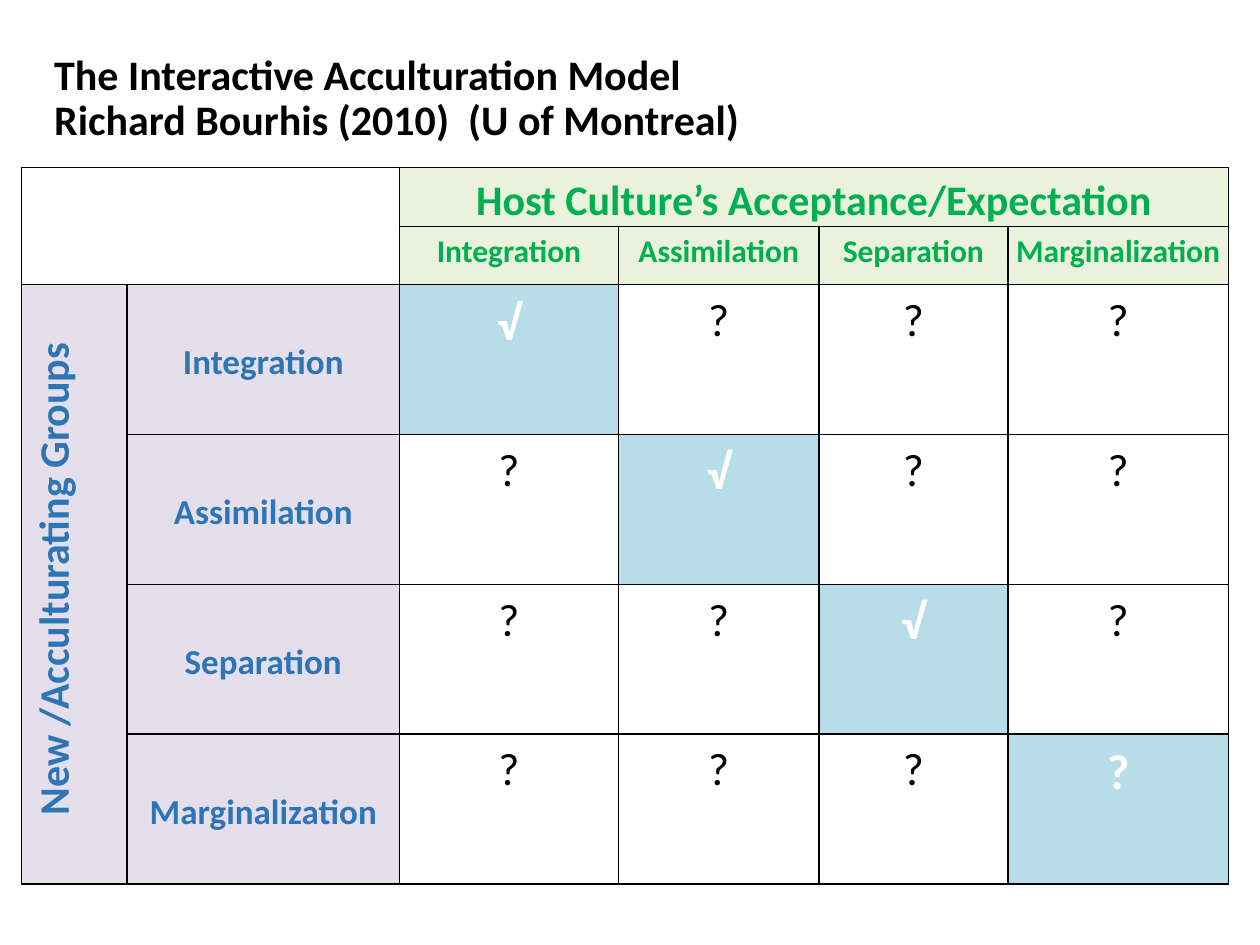
from lxml import etree
from pptx import Presentation
from pptx import util as u
from pptx.dml import color
from pptx.enum import text
from pptx.oxml import ns

COLORS = {
    "ink": "000000",
    "host": "00B050",
    "host_fill": "EAF1DD",
    "group": "2E75B6",
    "group_fill": "E5DFEC",
    "match": "FFFFFF",
    "match_fill": "B6DDE8",
}
FONT = "Calibri"
STRATEGIES = ["Integration", "Assimilation", "Separation", "Marginalization"]
COL_WIDTHS = [0.84, 2.16, 1.74, 1.59, 1.5, 1.75]
ROW_HEIGHTS = [0.46] * 2 + [1.19] * 4


def rgb(name):
    return color.RGBColor.from_string(COLORS[name])


def format_runs(p, size, ink, bold=True):
    for r in p.runs:
        r.font.name = FONT
        r.font.size = u.Pt(size)
        r.font.bold = bold
        r.font.color.rgb = rgb(ink)


def add_borders(cell):
    tcPr = cell._tc.get_or_add_tcPr()
    for i, side in enumerate(("lnL", "lnR", "lnT", "lnB")):
        ln = etree.Element(ns.qn(f"a:{side}"), w=str(u.Pt(1)))
        fill = etree.SubElement(ln, ns.qn("a:solidFill"))
        etree.SubElement(fill, ns.qn("a:srgbClr"), val=COLORS["ink"])
        tcPr.insert(i, ln)


def fill_cell(cell, words, size, ink, fill=None, bold=True):
    p = cell.text_frame.paragraphs[0]
    p.text = words
    p.alignment = text.PP_ALIGN.CENTER
    p.line_spacing = 1.15
    p.space_after = u.Pt(10)
    format_runs(p, size, ink, bold)
    if fill:
        cell.fill.solid()
        cell.fill.fore_color.rgb = rgb(fill)


def add_title(s, left, top, width, height):
    sp = s.shapes.title
    sp.left, sp.top, sp.width, sp.height = map(u.Inches, (left, top, width, height))
    tf = sp.text_frame
    tf.text = "The Interactive Acculturation Model \vRichard Bourhis (2010)  (U of Montreal)"
    tf.vertical_anchor = text.MSO_ANCHOR.MIDDLE
    p = tf.paragraphs[0]
    p.alignment = text.PP_ALIGN.LEFT
    p.line_spacing = 0.9
    format_runs(p, 24, "ink")


def add_matrix(s, left, top, width, height):
    box = map(u.Inches, (left, top, width, height))
    table = s.shapes.add_table(len(ROW_HEIGHTS), len(COL_WIDTHS), *box).table
    table.first_row = table.horz_banding = False
    for col, w in zip(table.columns, COL_WIDTHS):
        col.width = u.Inches(w)
    for row, h in zip(table.rows, ROW_HEIGHTS):
        row.height = u.Inches(h)
    for cell in table.iter_cells():
        cell.margin_left = cell.margin_right = u.Inches(0.05)
        cell.margin_top = cell.margin_bottom = 0
        cell.fill.background()
        add_borders(cell)

    table.cell(0, 0).merge(table.cell(1, 1))
    table.cell(0, 2).merge(table.cell(0, 5))
    table.cell(2, 0).merge(table.cell(5, 0))
    fill_cell(table.cell(0, 2), "Host Culture’s Acceptance/Expectation", 24, "host", "host_fill")
    groups = table.cell(2, 0)
    fill_cell(groups, "New /Acculturating Groups", 24, "group", "group_fill")
    groups._tc.get_or_add_tcPr().set("vert", "vert270")
    groups.text_frame.paragraphs[0]._p.get_or_add_pPr().set("marL", str(u.Inches(0.08)))

    for i, strategy in enumerate(STRATEGIES):
        fill_cell(table.cell(1, i + 2), strategy, 18, "host", "host_fill")
        label = table.cell(i + 2, 1)
        fill_cell(label, strategy, 20, "group", "group_fill")
        label.vertical_anchor = text.MSO_ANCHOR.MIDDLE
        for j in range(len(STRATEGIES)):
            cell = table.cell(i + 2, j + 2)
            if i == j:
                mark = "?" if strategy == "Marginalization" else "√"
                fill_cell(cell, mark, 28, "match", "match_fill")
            else:
                fill_cell(cell, "?", 26, "ink", bold=False)


def main():
    prs = Presentation()
    prs.slide_width, prs.slide_height = u.Inches(10), u.Inches(7.5)
    s = prs.slides.add_slide(prs.slide_layouts[5])
    add_title(s, 0.33, 0.25, 9.34, 1.08)
    add_matrix(s, 0.17, 1.33, sum(COL_WIDTHS), sum(ROW_HEIGHTS))
    prs.save("out.pptx")


if __name__ == "__main__":
    main()
